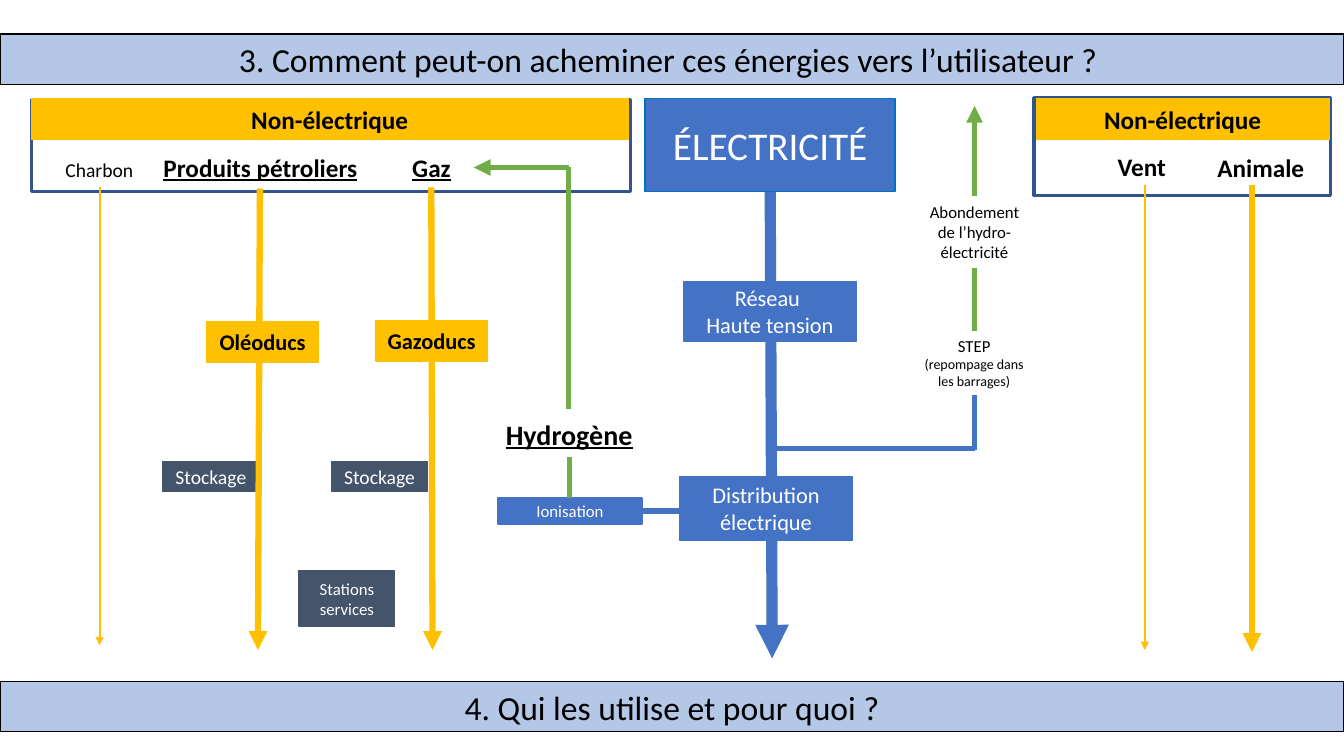
from lxml import etree
from pptx import Presentation
from pptx import util as u
from pptx.dml.color import RGBColor
from pptx.enum import shapes, text
from pptx.oxml.ns import qn

HUES = {
    "blue": "4472C4", "edge": "0070C0", "navy": "325491", "pale": "B4C7E7",
    "gold": "FFC000", "green": "70AD47", "slate": "44546A",
    "black": "000000", "white": "FFFFFF",
}


class Chart:
    """Flow chart style and the slide it is drawn on."""

    font = "Calibri"

    def __init__(self, slide):
        self.items = slide.shapes

    def hue(self, name):
        return RGBColor.from_string(HUES[name])

    def letter(self, shape, words, size, ink, bold=False, line=False):
        """Fill a shape with centred lines; size is one value or one per line."""
        frame = shape.text_frame
        frame.word_wrap = True
        rows = words.split("\n")
        sizes = size if isinstance(size, tuple) else (size,) * len(rows)
        for i, (row, pts) in enumerate(zip(rows, sizes)):
            par = frame.paragraphs[0] if i == 0 else frame.add_paragraph()
            par.text = row
            par.alignment = text.PP_ALIGN.CENTER
            font = par.font
            font.name, font.size, font.bold = self.font, u.Pt(pts), bold
            font.underline = line
            font.color.rgb = self.hue(ink)

    def box(self, x, y, w, h, fill, words="", size=16, ink="white",
            edge=None, width=1, bold=False):
        shape = self.items.add_shape(shapes.MSO_SHAPE.RECTANGLE,
                                     *map(u.Cm, (x, y, w, h)))
        shape.shadow.inherit = False
        shape.fill.solid()
        shape.fill.fore_color.rgb = self.hue(fill)
        shape.line.color.rgb = self.hue(edge or fill)
        shape.line.width = u.Pt(width)
        shape.text_frame.vertical_anchor = text.MSO_ANCHOR.MIDDLE
        if words:
            self.letter(shape, words, size, ink, bold)

    def label(self, x, y, w, h, words, size, bold=False, line=False):
        shape = self.items.add_textbox(*map(u.Cm, (x, y, w, h)))
        self.letter(shape, words, size, "black", bold, line)

    def link(self, x1, y1, x2, y2, color, width=4, arrow=False):
        line = self.items.add_connector(shapes.MSO_CONNECTOR.STRAIGHT,
                                        *map(u.Cm, (x1, y1, x2, y2)))
        line.line.color.rgb = self.hue(color)
        line.line.width = u.Pt(width)
        props = line.element.spPr
        if arrow:
            etree.SubElement(props.find(qn("a:ln")), qn("a:tailEnd"),
                             type="triangle")
        etree.SubElement(props, qn("a:effectLst"))

    def group(self, x, y, w, h, head_x, head_w):
        """White frame under a gold heading."""
        self.box(x, y, w, h, "white", edge="navy", width=2.25)
        self.box(head_x, 2.49, head_w, 1.02, "gold", "Non-électrique", 18,
                 "black", width=0.75, bold=True)


def main():
    deck = Presentation()
    deck.slide_width, deck.slide_height = u.Cm(33.87), u.Cm(19.05)
    c = Chart(deck.slides.add_slide(deck.slide_layouts[6]))

    # Question bands
    for y, words in ((0.86, "3. Comment peut-on acheminer ces énergies vers l’utilisateur ? "),
                     (17.17, "4. Qui les utilise et pour quoi ?")):
        c.box(0, y, 33.87, 1.27, "pale", words, 24, "black", edge="black")

    # Electric column
    c.link(16.18, 12.88, 17.12, 12.88, "blue")
    c.link(19.41, 4.8, 19.46, 16.59, "blue", 8, True)
    c.box(16.26, 2.49, 6.3, 2.34, "blue", "ÉLECTRICITÉ", 28, edge="edge")
    c.box(17.22, 7.09, 4.37, 1.5, "blue", "Réseau \nHaute tension")
    c.box(17.12, 12.01, 4.37, 1.6, "blue", "Distribution électrique")
    c.box(12.55, 12.55, 3.63, 0.66, "blue", "Ionisation", 12)

    # Pumped storage branch
    c.link(19.53, 11.3, 24.56, 11.3, "blue")
    c.link(24.56, 11.33, 24.56, 9.96, "blue")
    c.link(24.56, 8.33, 24.56, 6.76, "green")
    c.link(24.56, 4.95, 24.56, 2.67, "green", arrow=True)
    c.label(23.04, 8.33, 3.02, 1.63, "STEP\n(repompage dans les barrages)", (12, 10))
    c.label(22.96, 4.95, 3.2, 1.8, "Abondement de l’hydro-électricité", 12)

    # Storage and stations
    for x in (4.11, 8.36):
        c.box(x, 11.63, 2.41, 0.76, "slate", "Stockage", 14)
    c.box(7.54, 14.38, 2.41, 1.4, "slate", "Stations services", 12)

    # Frames of the two non-electric groups
    c.group(0.79, 2.51, 15.11, 2.31, 0.79, 15.04)
    c.group(26.06, 2.46, 7.47, 2.46, 26.11, 7.39)

    # Hydrogen branch
    c.label(12.12, 10.39, 4.45, 1.12, "Hydrogène", 20, True, True)
    c.link(14.35, 12.55, 14.35, 11.51, "green")
    c.link(14.33, 10.31, 14.33, 4.22, "green")
    c.link(14.35, 4.22, 11.94, 4.22, "green", arrow=True)

    # Fuel flows: start, end, width
    for x1, y1, x2, y2, width in ((2.51, 4.72, 2.51, 16.26, 1.5),
                                  (6.55, 4.75, 6.5, 16.38, 4.5),
                                  (10.87, 4.72, 10.9, 16.38, 4.5),
                                  (28.85, 4.65, 28.85, 16.38, 1.5),
                                  (31.55, 4.65, 31.55, 16.43, 4.5)):
        c.link(x1, y1, x2, y2, "gold", width, True)

    # Fuel names
    c.label(0.84, 3.86, 3.33, 0.86, "Charbon", 14)
    c.label(3.76, 3.71, 5.61, 1.02, "Produits pétroliers", 18, True, True)
    c.label(9.02, 3.71, 3.71, 1.02, "Gaz", 18, True, True)
    c.label(27.38, 3.68, 2.79, 1.02, "Vent", 18, True)
    c.label(30.38, 3.71, 2.79, 1.02, "Animale", 18, True)

    # Pipelines
    for x, y, words in ((5.21, 8.1, "Oléoducs"), (9.47, 8.08, "Gazoducs")):
        c.box(x, y, 2.82, 1.02, "gold", words, 16, "black", bold=True)

    deck.save("out.pptx")


if __name__ == "__main__":
    main()
